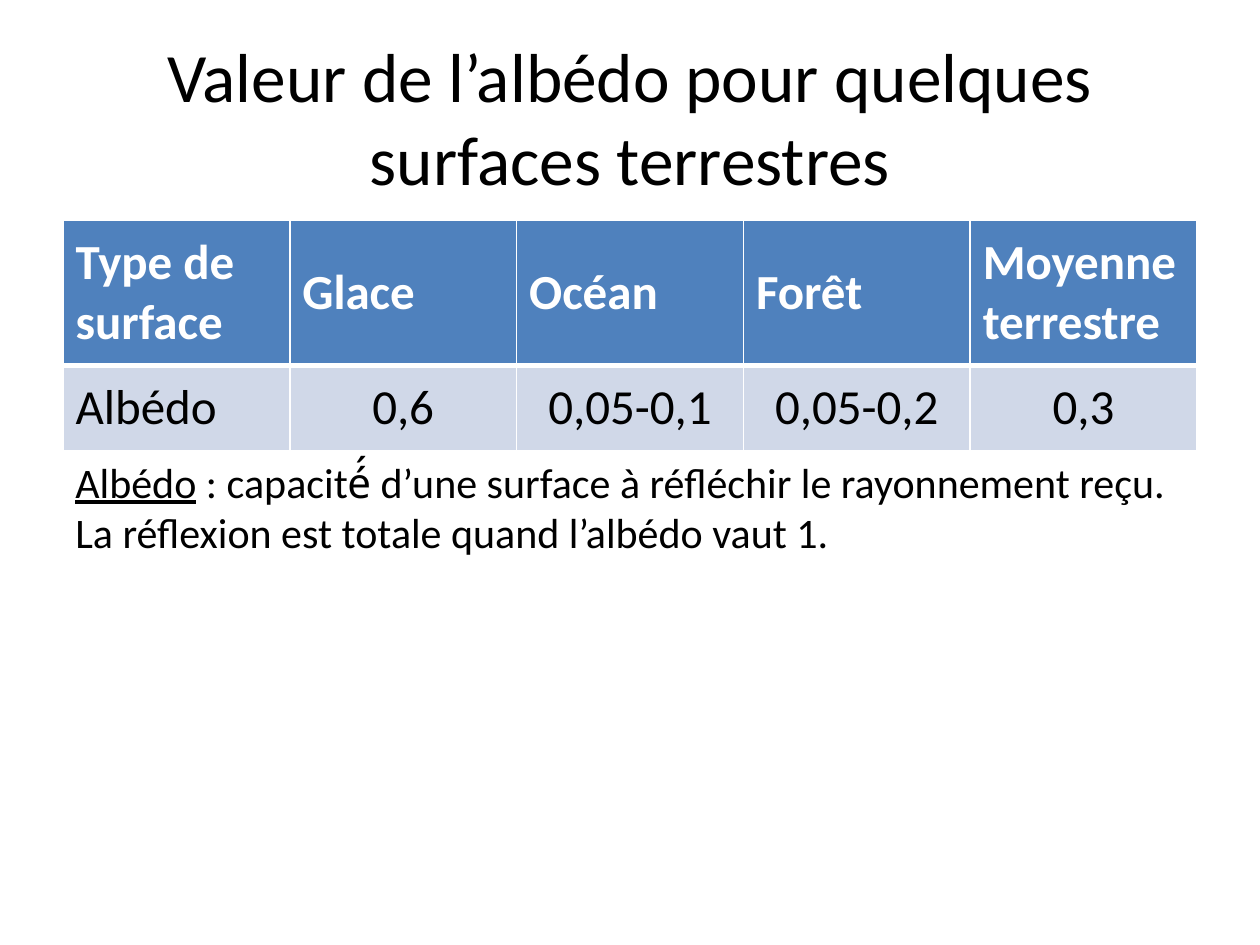
from typing import NamedTuple

from lxml import etree
from pptx import Presentation
from pptx.dml.color import RGBColor
from pptx.enum.text import MSO_ANCHOR, MSO_AUTO_SIZE, PP_ALIGN
from pptx.oxml.ns import qn
from pptx.util import Inches, Pt

BLACK = RGBColor(0x00, 0x00, 0x00)
WHITE = RGBColor(0xFF, 0xFF, 0xFF)
HEADER_BLUE = RGBColor(0x4F, 0x81, 0xBD)
BAND_BLUE = RGBColor(0xD0, 0xD8, 0xE8)
LEFT, CENTER = PP_ALIGN.LEFT, PP_ALIGN.CENTER
MIDDLE = MSO_ANCHOR.MIDDLE
GROW = MSO_AUTO_SIZE.SHAPE_TO_FIT_TEXT
NO_AUTOFIT = MSO_AUTO_SIZE.NONE

TITLE_ONLY_LAYOUT = 5
CONTENT_LEFT, CONTENT_WIDTH = Inches(0.5), Inches(9)
CELL_MARGIN = Inches(0.1)


class RowStyle(NamedTuple):
    height: float
    fill: RGBColor
    color: RGBColor
    bold: bool
    value_align: PP_ALIGN
    top_border: float
    bottom_border: float


HEADER_STYLE = RowStyle(1.15, HEADER_BLUE, WHITE, True, LEFT, 1, 3)
BODY_STYLE = RowStyle(0.67, BAND_BLUE, BLACK, False, CENTER, 3, 1)
TABLE_ROWS = [
    (HEADER_STYLE, ["Type de surface ", "Glace", "Océan", "Forêt", "Moyenne terrestre"]),
    (BODY_STYLE, ["Albédo", "0,6", "0,05-0,1", "0,05-0,2", "0,3"]),
]


def add_run(paragraph, text: str, size: float, color: RGBColor = BLACK, **formats) -> None:
    run = paragraph.add_run()
    run.text = text
    run.font.color.rgb = color
    for name, value in {"name": "Calibri", "size": Pt(size), **formats}.items():
        setattr(run.font, name, value)


def set_borders(cell, style: RowStyle) -> None:
    """Draw white cell edges; they must precede the fill in the cell properties."""
    properties = cell._tc.get_or_add_tcPr()
    edges = {"lnL": 1, "lnR": 1, "lnT": style.top_border, "lnB": style.bottom_border}
    for tag, width in edges.items():
        line = etree.SubElement(properties, qn(f"a:{tag}"), w=str(Pt(width)))
        fill = etree.SubElement(line, qn("a:solidFill"))
        etree.SubElement(fill, qn("a:srgbClr"), val=str(WHITE))


def fill_cell(cell, text: str, style: RowStyle, align: PP_ALIGN) -> None:
    set_borders(cell, style)
    cell.fill.solid()
    cell.fill.fore_color.rgb = style.fill
    cell.vertical_anchor = MIDDLE
    for side in ("left", "right", "top", "bottom"):
        setattr(cell, f"margin_{side}", CELL_MARGIN)
    paragraph = cell.text_frame.paragraphs[0]
    paragraph.alignment = align
    add_run(paragraph, text, 28, style.color, bold=style.bold)


def add_title(slide) -> None:
    title = slide.shapes.title
    title.left, title.top = CONTENT_LEFT, Inches(0.3)
    title.width, title.height = CONTENT_WIDTH, Inches(1.25)
    frame = title.text_frame
    frame.auto_size = NO_AUTOFIT
    frame.vertical_anchor = MIDDLE
    paragraph = frame.paragraphs[0]
    paragraph.alignment = CENTER
    add_run(paragraph, "Valeur de l’albédo pour quelques surfaces terrestres", 39.6)


def add_albedo_table(slide) -> None:
    height = Inches(sum(style.height for style, _ in TABLE_ROWS))
    table = slide.shapes.add_table(
        len(TABLE_ROWS), len(TABLE_ROWS[0][1]),
        CONTENT_LEFT, Inches(1.75), CONTENT_WIDTH, height,
    ).table
    for row, (style, texts) in zip(table.rows, TABLE_ROWS):
        row.height = Inches(style.height)
        for column, (cell, text) in enumerate(zip(row.cells, texts)):
            fill_cell(cell, text, style, style.value_align if column else LEFT)


def add_definition(slide) -> None:
    box = slide.shapes.add_textbox(CONTENT_LEFT, Inches(3.57), CONTENT_WIDTH, Inches(0.91))
    box.text_frame.word_wrap = True
    box.text_frame.auto_size = GROW
    paragraph = box.text_frame.paragraphs[0]
    add_run(paragraph, "Albédo", 24, underline=True)
    add_run(
        paragraph,
        " : capacité́ d’une surface à réfléchir le rayonnement reçu. "
        "La réflexion est totale quand l’albédo vaut 1.",
        24,
    )


def main() -> None:
    presentation = Presentation()
    presentation.slide_width, presentation.slide_height = Inches(10), Inches(7.5)
    slide = presentation.slides.add_slide(presentation.slide_layouts[TITLE_ONLY_LAYOUT])
    add_title(slide)
    add_albedo_table(slide)
    add_definition(slide)
    presentation.save("out.pptx")


if __name__ == "__main__":
    main()
